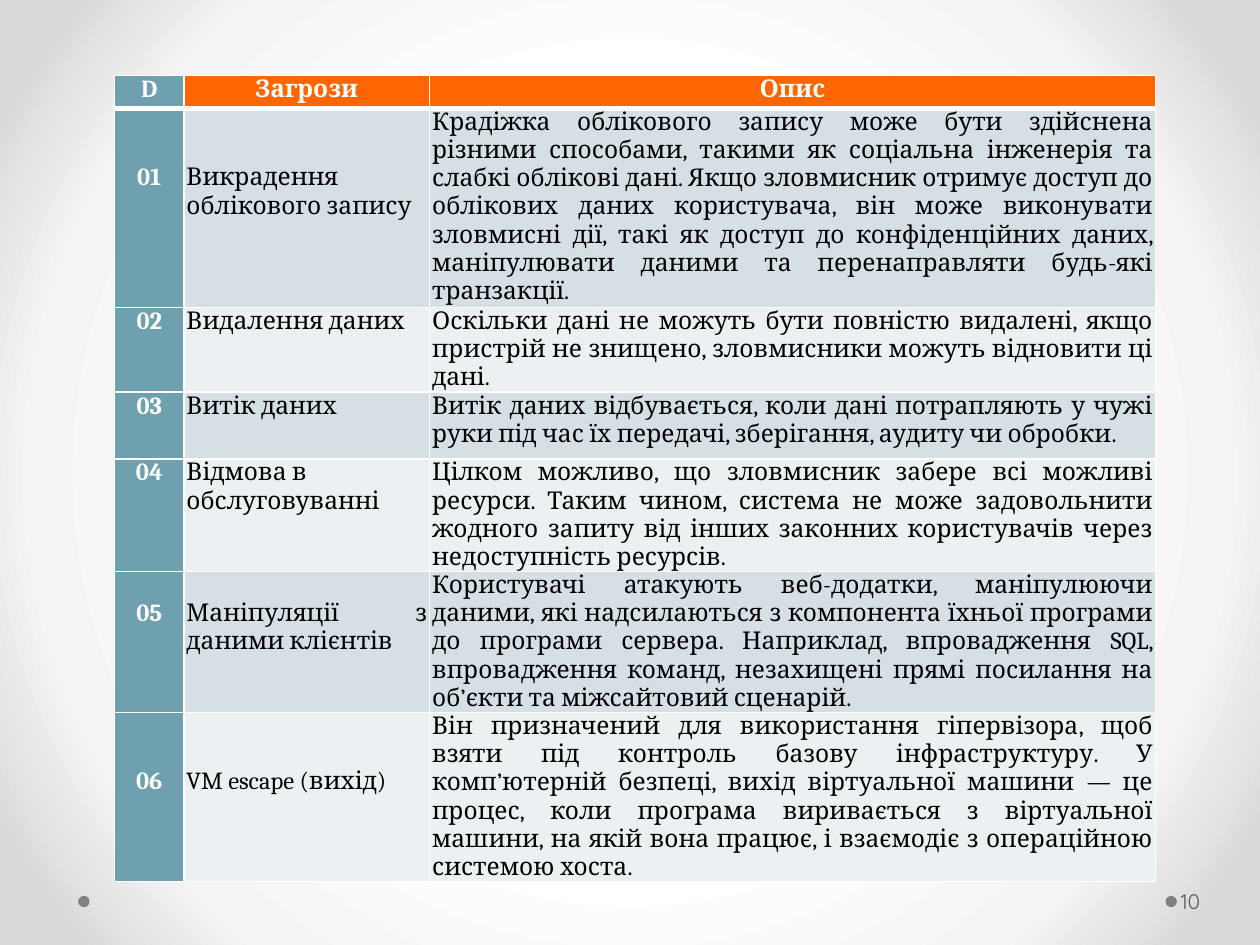
from lxml.etree import SubElement
from pptx import Presentation
from pptx.dml.color import RGBColor
from pptx.enum.shapes import MSO_SHAPE
from pptx.enum.text import MSO_ANCHOR, PP_ALIGN
from pptx.oxml import parse_xml
from pptx.oxml.ns import nsdecls, qn
from pptx.util import Inches, Pt

WHITE, BLACK, TEAL, ORANGE = "FFFFFF", "000000", "6EA0B0", "FF6600"
BANDS = ("D5DFE4", "EBF0F2")
LINE_HEIGHT = 0.22
COLUMN_WIDTHS = (0.55, 1.95, 5.76)
ROW_HEIGHTS = (0.26, 1.58, 0.53, 0.53, 0.79, 1.05, 1.32)
HEADINGS = ("D", "Загрози", "Опис")
THREATS = (
    ("Викрадення облікового запису", 2, PP_ALIGN.JUSTIFY,
     "Крадіжка облікового запису може бути здійснена різними способами, такими як "
     "соціальна інженерія та слабкі облікові дані. Якщо зловмисник отримує доступ до "
     "облікових даних користувача, він може виконувати зловмисні дії, такі як доступ до "
     "конфіденційних даних, маніпулювати даними та перенаправляти будь-які транзакції."),
    ("Видалення даних", 0, PP_ALIGN.JUSTIFY,
     "Оскільки дані не можуть бути повністю видалені, якщо пристрій не знищено, "
     "зловмисники можуть відновити ці дані."),
    ("Витік даних", 0, PP_ALIGN.JUSTIFY,
     "Витік даних відбувається, коли дані потрапляють у чужі руки під час їх передачі, "
     "зберігання, аудиту чи обробки."),
    ("Відмова в обслуговуванні", 0, PP_ALIGN.LEFT,
     "Цілком можливо, що зловмисник забере всі можливі ресурси. Таким чином, система не "
     "може задовольнити жодного запиту від інших законних користувачів через "
     "недоступність ресурсів."),
    ("Маніпуляції з даними клієнтів", 1, PP_ALIGN.JUSTIFY,
     "Користувачі атакують веб-додатки, маніпулюючи даними, які надсилаються з компонента "
     "їхньої програми до програми сервера. Наприклад, впровадження SQL, впровадження "
     "команд, незахищені прямі посилання на об’єкти та міжсайтовий сценарій."),
    ("VM escape (вихід)", 2, PP_ALIGN.JUSTIFY,
     "Він призначений для використання гіпервізора, щоб взяти під контроль базову "
     "інфраструктуру. У комп’ютерній безпеці, вихід віртуальної машини — це процес, коли "
     "програма виривається з віртуальної машини, на якій вона працює, і взаємодіє з "
     "операційною системою хоста."),
)


def color(value):
    """Turn a hex string into a colour."""
    return RGBColor.from_string(value)


def add_span(para, text, size, font, ink, bold=False):
    """Add one formatted run to a paragraph."""
    span = para.add_run()
    span.text = text
    span.font.size = Pt(size)
    span.font.name = font
    span.font.bold = bold
    span.font.color.rgb = color(ink)


def paint_background(page):
    """Fill the page with a radial gradient from white to grey."""
    page.background.fill.solid()
    solid = page.element.find(".//" + qn("p:bgPr")).find(qn("a:solidFill"))
    stops = "".join(
        f'<a:gs pos="{place * 1000}"><a:srgbClr val="{shade}"/></a:gs>'
        for place, shade in ((50, WHITE), (76, "F4F4F4"), (92, "DADADA")))
    gradient = parse_xml(
        f'<a:gradFill {nsdecls("a")} rotWithShape="1"><a:gsLst>{stops}</a:gsLst>'
        '<a:path path="circle"><a:fillToRect l="50000" t="50000" r="50000" b="50000"/>'
        '</a:path></a:gradFill>')
    solid.getparent().replace(solid, gradient)


def set_borders(cell, top=1, bottom=1):
    """Draw white borders on the four sides of a cell."""
    properties = cell._tc.get_or_add_tcPr()
    for side, width in (("L", 1), ("R", 1), ("T", top), ("B", bottom)):
        line = SubElement(properties, qn(f"a:ln{side}"), w=str(Pt(width)))
        fill = SubElement(line, qn("a:solidFill"))
        SubElement(fill, qn("a:srgbClr"), val=WHITE)


def fill_cell(cell, text, fill, ink, align, bold=False, skipped=0, top=1, bottom=1):
    """Format a table cell and push its text down by the skipped lines."""
    set_borders(cell, top, bottom)
    cell.fill.solid()
    cell.fill.fore_color.rgb = color(fill)
    cell.margin_left = cell.margin_right = Inches(0.02)
    cell.margin_top = Inches(skipped * LINE_HEIGHT)
    cell.margin_bottom = 0
    para = cell.text_frame.paragraphs[0]
    para.alignment = align
    add_span(para, text, 14, "Cambria", ink, bold)


def add_threat_table(page, left, top, width, height):
    """Place the table of threats and their descriptions."""
    table = page.shapes.add_table(
        len(ROW_HEIGHTS), len(COLUMN_WIDTHS),
        Inches(left), Inches(top), Inches(width), Inches(height)).table
    for column, size in zip(table.columns, COLUMN_WIDTHS):
        column.width = Inches(size)
    for row, size in zip(table.rows, ROW_HEIGHTS):
        row.height = Inches(size)
    for index, heading in enumerate(HEADINGS):
        fill_cell(table.cell(0, index), heading, ORANGE if index else TEAL, WHITE,
                  PP_ALIGN.CENTER, bold=True, bottom=3)
    for number, (threat, skipped, align, description) in enumerate(THREATS, 1):
        band = BANDS[(number - 1) % 2]
        edge = 3 if number == 1 else 1
        fill_cell(table.cell(number, 0), f"{number:02}", TEAL, WHITE,
                  PP_ALIGN.CENTER, bold=True, skipped=skipped, top=edge)
        fill_cell(table.cell(number, 1), threat, band, BLACK, align,
                  skipped=skipped, top=edge)
        fill_cell(table.cell(number, 2), description, band, BLACK,
                  PP_ALIGN.JUSTIFY, top=edge)


def add_footer_dot(page, left, top, size):
    """Place one grey dot of the footer."""
    dot = page.shapes.add_shape(
        MSO_SHAPE.OVAL, Inches(left), Inches(top), Inches(size), Inches(size))
    dot.shadow.inherit = False
    dot.fill.solid()
    dot.fill.fore_color.rgb = color("808080")
    dot.line.fill.background()


def add_page_number(page, left, top, width, height):
    """Place the page number."""
    box = page.shapes.add_textbox(
        Inches(left), Inches(top), Inches(width), Inches(height))
    frame = box.text_frame
    frame.word_wrap = True
    frame.vertical_anchor = MSO_ANCHOR.MIDDLE
    frame.margin_left = Inches(0.03)
    frame.margin_top = frame.margin_right = frame.margin_bottom = Inches(0.05)
    add_span(frame.paragraphs[0], "10", 12, "Quicksand", "595959")


def main():
    """Build the deck and save it."""
    deck = Presentation()
    deck.slide_width, deck.slide_height = Inches(10), Inches(7.5)
    page = deck.slides.add_slide(deck.slide_layouts[6])
    paint_background(page)
    for left in (9.25, 0.62):
        add_footer_dot(page, left, 7.11, 0.09)
    add_threat_table(page, 0.91, 0.6, 8.27, 6.06)
    add_page_number(page, 9.34, 6.95, 0.61, 0.4)
    deck.save("out.pptx")


if __name__ == "__main__":
    main()
